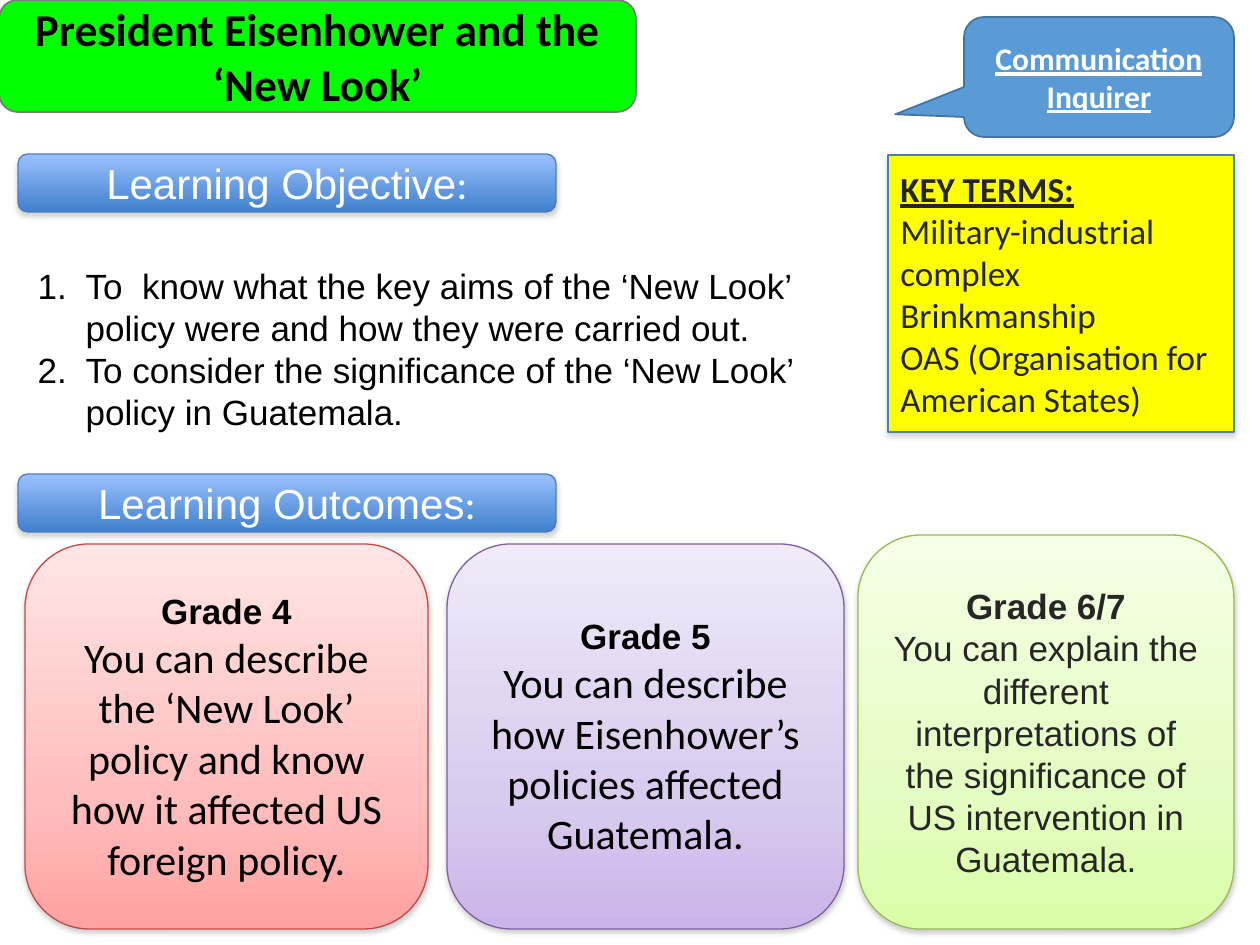
"""Build the lesson slide on Eisenhower and the New Look."""
from dataclasses import dataclass

from lxml import etree
from pptx import Presentation
from pptx import util as u
from pptx.dml.color import RGBColor
from pptx.enum import shapes, text
from pptx.oxml.ns import qn

DPI = 126
ROUND = shapes.MSO_SHAPE.ROUNDED_RECTANGLE
RECT = shapes.MSO_SHAPE.RECTANGLE
CALL = shapes.MSO_SHAPE.ROUNDED_RECTANGULAR_CALLOUT
MID = text.PP_ALIGN.CENTER
LEFT = text.PP_ALIGN.LEFT
BLUE = ((0, "9BC1FF"), (100, "3F80CD"))


@dataclass(frozen=True)
class Run:
    """Text in one format."""
    words: str
    size: int = 20
    face: str = "Calibri"
    ink: str = "000000"
    bold: bool = False
    under: bool = False


@dataclass(frozen=True)
class Box:
    """A filled shape; each entry of paras is a tuple of runs."""
    area: tuple[int, int, int, int]
    fill: str | tuple
    edge: str
    paras: tuple = ()
    kind: int = ROUND
    width: float = 0.75
    shade: int = 0
    drop: float = 1.8
    align: int = MID


def px(n: int) -> u.Emu:
    """Turn pixels into EMU."""
    return u.Emu(round(n * 914400 / DPI))


def rgb(code: str) -> RGBColor:
    """Turn a hex string into a colour."""
    return RGBColor.from_string(code)


def node(up, tag: str, **attrs):
    """Add a drawing element below another."""
    return etree.SubElement(up, qn(tag), {k: str(v) for k, v in attrs.items()})


def place(shape, area: tuple[int, int, int, int]) -> None:
    """Move and size a shape."""
    shape.left, shape.top, shape.width, shape.height = map(px, area)


def write(shape, paras: tuple, align: int, anchor: int) -> None:
    """Fill a shape with formatted paragraphs."""
    frame = shape.text_frame
    frame.word_wrap = True
    frame.auto_size = text.MSO_AUTO_SIZE.NONE
    frame.vertical_anchor = anchor
    frame.text = "\n".join(runs[0].words for runs in paras)
    for para, runs in zip(frame.paragraphs, paras):
        para.alignment = align
        para.space_before = u.Pt(0)
        for extra in runs[1:]:
            para.add_run().text = extra.words
        for run, look in zip(para.runs, runs):
            font = run.font
            font.size, font.name = u.Pt(look.size), look.face
            font.bold, font.underline = look.bold, look.under
            font.color.rgb = rgb(look.ink)


def blend(shape, stops: tuple) -> None:
    """Give a shape a gradient running from top to bottom."""
    shape.fill.gradient()
    shape.fill.gradient_angle = 270
    group = shape._element.spPr.find(".//" + qn("a:gsLst"))
    group.clear()
    for pos, code in stops:
        stop = node(group, "a:gs", pos=pos * 1000)
        node(stop, "a:srgbClr", val=code)


def shadow(shape, shade: int, drop: float) -> None:
    """Give a shape a soft shadow below it."""
    group = shape._element.spPr.find(qn("a:effectLst"))
    outer = node(group, "a:outerShdw", blurRad=u.Pt(3.1), dist=u.Pt(drop),
                 dir=5400000, rotWithShape=0)
    tone = node(outer, "a:srgbClr", val="808080")
    node(tone, "a:alpha", val=shade * 1000)


def draw(slide, box: Box):
    """Draw one box with its text."""
    shape = slide.shapes.add_shape(box.kind, *map(px, box.area))
    shape.shadow.inherit = False
    if isinstance(box.fill, str):
        shape.fill.solid()
        shape.fill.fore_color.rgb = rgb(box.fill)
    else:
        blend(shape, box.fill)
    shape.line.color.rgb = rgb(box.edge)
    shape.line.width = u.Pt(box.width)
    if box.shade:
        shadow(shape, box.shade, box.drop)
    if box.paras:
        write(shape, box.paras, box.align, text.MSO_ANCHOR.MIDDLE)
    return shape


def head(top: int, words: str) -> Box:
    """Describe a blue section heading."""
    paras = ((Run(words, 24, "Arial", "FFFFFF"), Run(":", 24, ink="FFFFFF")),)
    return Box((18, top, 538, 58), BLUE, "4A7EBB", paras, shade=35)


def card(area: tuple, tints: tuple, edge: str, grade: str, goal: Run) -> Box:
    """Describe a grade card."""
    paras = ((Run(grade, 20, "Arial", goal.ink, True),), (goal,))
    return Box(area, tuple(zip((0, 65, 100), tints)), edge, paras,
               shade=38, drop=1.6)


def number(para) -> None:
    """Number a paragraph with a hanging indent."""
    props = para._p.get_or_add_pPr()
    props.set("marL", str(px(48)))
    props.set("indent", str(px(-48)))
    node(props, "a:buFont", typeface="+mj-lt")
    node(props, "a:buAutoNum", type="arabicPeriod")


DARK = "262626"
BOXES = (
    head(154, "Learning Objective"),
    head(474, "Learning Outcomes"),
    card((25, 544, 403, 385), ("FFE5E5", "FFBEBD", "FFA2A1"), "BE4B48",
         "Grade 4", Run("You can describe the ‘New Look’ policy and know "
                        "how it affected US foreign policy.", 24)),
    card((447, 544, 397, 385), ("F0EAF9", "D9CBEE", "C9B5E8"), "7D60A0",
         "Grade 5", Run("You can describe how Eisenhower’s policies "
                        "affected Guatemala.", 24)),
    card((858, 535, 376, 394), ("F5FFE6", "E4FDC2", "DAFDA7"), "98B954",
         "Grade 6/7", Run("You can explain the different interpretations of "
                          "the significance of US intervention in Guatemala.",
                          20, "Arial", DARK)),
    Box((888, 155, 346, 277), "FFFF00", "4A7EBB", (
        (Run("KEY TERMS:", ink=DARK, bold=True, under=True),),
        (Run("Military-industrial complex", ink=DARK),),
        (Run("Brinkmanship", ink=DARK),),
        (Run("OAS (Organisation for American States)", ink=DARK),),
    ), RECT, shade=35, align=LEFT),
)
BANNER = Box((-1, 0, 637, 112), "00FF00", "7A7A7A", width=1)
BUBBLE = Box((964, 17, 270, 120), "5B9BD5", "43739E", tuple(
    (Run(word, 18, ink="FFFFFF", bold=True, under=True),)
    for word in ("Communication", "Inquirer")), CALL, 1)
TITLE = ((Run("President Eisenhower and the ‘New Look’", 26, bold=True),),)
AIMS = (
    (Run("To  know what the key aims of the ‘New Look’ policy were and how "
         "they were carried out.", face="Arial"),),
    (Run("To consider the significance of the ‘New Look’ policy in "
         "Guatemala.", face="Arial"),),
)


def main() -> None:
    """Build and save the slide."""
    deck = Presentation()
    deck.slide_width, deck.slide_height = px(1260), px(945)
    slide = deck.slides.add_slide(deck.slide_layouts[1])
    title, body = slide.placeholders
    for box in (*BOXES, BANNER):
        draw(slide, box)
    place(title, BANNER.area)
    write(title, TITLE, MID, text.MSO_ANCHOR.MIDDLE)
    slide.shapes._spTree.append(title._element)
    bubble = draw(slide, BUBBLE)
    for i, value in enumerate((-0.755, 0.311, 0.167)):
        bubble.adjustments[i] = value
    place(body, (25, 258, 854, 224))
    write(body, AIMS, LEFT, text.MSO_ANCHOR.TOP)
    for para in body.text_frame.paragraphs:
        number(para)
    deck.save("out.pptx")


if __name__ == "__main__":
    main()
